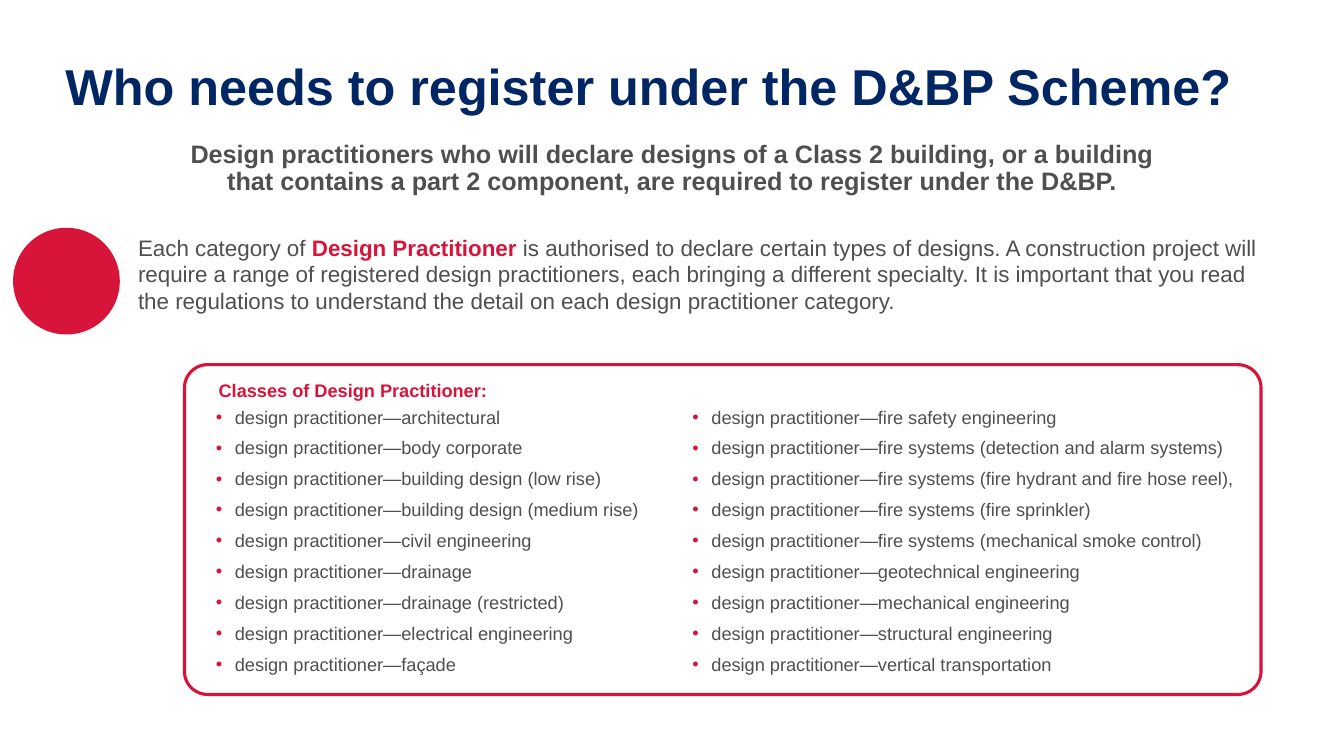
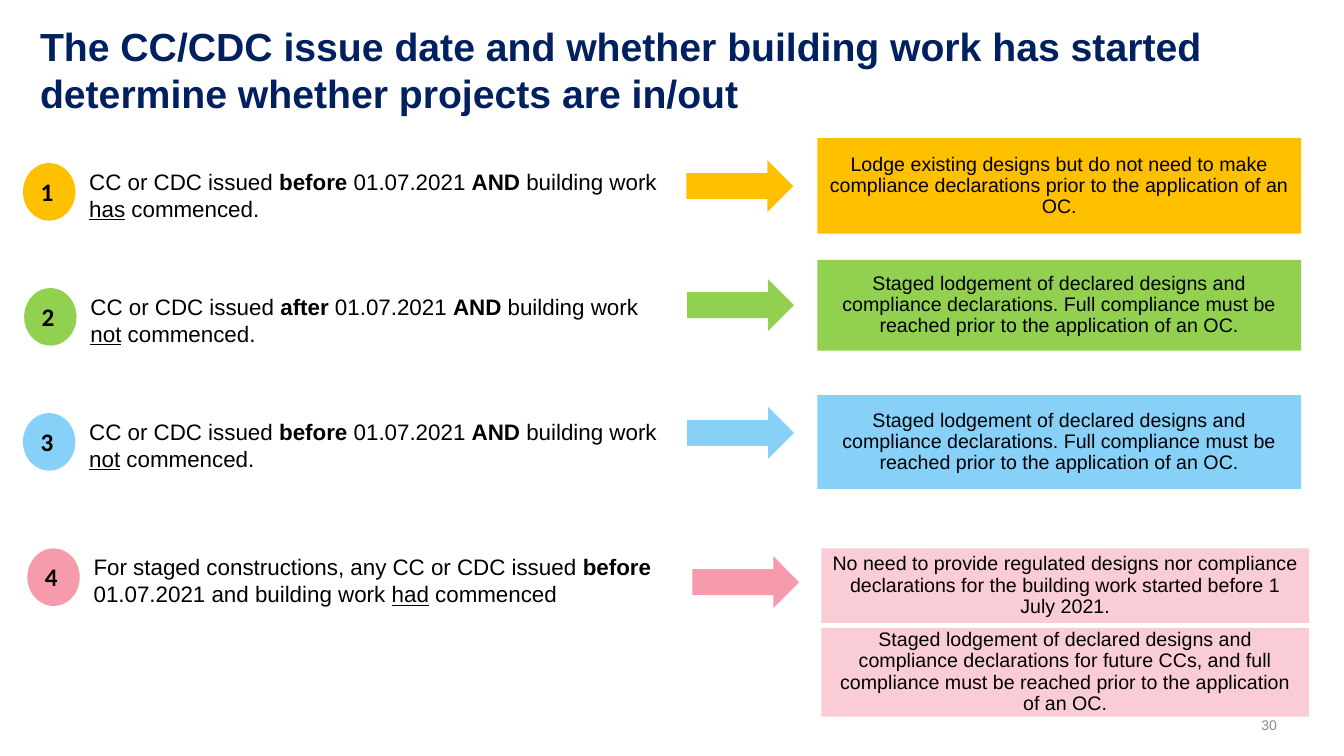
from lxml.etree import SubElement
from pptx import Presentation
from pptx.dml.color import RGBColor
from pptx.enum.shapes import MSO_SHAPE as Shape
from pptx.enum.text import MSO_ANCHOR as Anchor, PP_ALIGN as Align
from pptx.oxml.ns import qn
from pptx.util import Cm, Pt

RED, GREY, BLACK = "D7153A", "4F4F4F", "000000"
AMBER, GREEN, BLUE, PINK, PALE_PINK = "FFC000", "92D050", "87D1F9", "F59BAC", "FACDD6"
HEADING_FONT, BADGE_FONT = "Arial", "Calibri"

# A run is (text, marks): "b" bold, "u" underlined, "r" red
REGISTER_TITLE = "Who needs to register under the D&BP Scheme?"
REQUIREMENT = (
    "Design practitioners who will declare designs of a Class 2 building, or a building "
    "that contains a part 2 component, are required to register under the D&BP."
)
CATEGORY_NOTE = [
    ("Each category of ", ""),
    ("Design Practitioner ", "br"),
    ("is authorised to declare certain types of designs. A construction project will "
     "require a range of registered design practitioners, each bringing a different "
     "specialty. It is important that you read the regulations to understand the detail "
     "on each design practitioner category.", ""),
]
CLASSES_HEADING = "Classes of Design Practitioner:"
CLASS_PREFIX = "design practitioner—"
# left, width, classes
CLASS_COLUMNS = [
    (5.44, 11.15, [
        "architectural", "body corporate", "building design (low rise)",
        "building design (medium rise)", "civil engineering", "drainage",
        "drainage (restricted)", "electrical engineering", "façade",
    ]),
    (17.45, 13.74, [
        "fire safety engineering", "fire systems (detection and alarm systems)",
        "fire systems (fire hydrant and fire hose reel),",
        "fire systems (fire sprinkler)", "fire systems (mechanical smoke control)",
        "geotechnical engineering", "mechanical engineering",
        "structural engineering", "vertical transportation",
    ]),
]

DATES_TITLE = ("The CC/CDC issue date and whether building work has started "
               "determine whether projects are in/out")
PAGE_NUMBER = "30"
STAGED = ("Staged lodgement of declared designs and compliance declarations. "
          "Full compliance must be reached prior to the application of an OC.")


def issued(when, started):
    return [("CC or CDC issued ", ""), (when, "b"), (" 01.07.2021 ", ""), ("AND", "b"),
            (" building work ", ""), (started, "u"), (" commenced.", "")]


# colour, badge (left, top), arrow (left, top), condition,
# outcome colour, outcomes as (left, top, width, height, text)
CASES = [
    (AMBER, (0.58, 4.11), (17.3, 4.04), issued("before", "has"), AMBER, [
        (20.6, 3.48, 12.19, 2.41,
         "Lodge existing designs but do not need to make compliance declarations "
         "prior to the application of an OC.")]),
    (GREEN, (0.61, 7.26), (17.32, 7.04), issued("after", "not"), GREEN, [
        (20.6, 6.55, 12.19, 2.29, STAGED)]),
    (BLUE, (0.58, 10.41), (17.32, 10.26), issued("before", "not"), BLUE, [
        (20.6, 9.96, 12.19, 2.36, STAGED)]),
    (PINK, (0.69, 13.82), (17.45, 14.02), [
        ("For staged constructions, any CC or CDC issued ", ""), ("before", "b"),
        (" 01.07.2021 and building work ", ""), ("had", "u"), (" commenced", "")],
     PALE_PINK, [
        (20.7, 13.82, 12.29, 1.88,
         "No need to provide regulated designs nor compliance declarations for the "
         "building work started before 1 July 2021."),
        (20.7, 15.82, 12.29, 2.24,
         "Staged lodgement of declared designs and compliance declarations for future "
         "CCs, and full compliance must be reached prior to the application of an OC.")]),
]
BADGE_SIZE = (1.32, 1.45)
ARROW_SIZE = (2.69, 1.3)
CONDITION_OFFSET, CONDITION_SIZE = 1.42, (15.04, 1.63)


def colour(value):
    return RGBColor.from_string(value)


def add_bullet(paragraph):
    props = paragraph._p.get_or_add_pPr()
    props.set("marL", str(Cm(0.48)))
    props.set("indent", str(-Cm(0.48)))
    SubElement(SubElement(props, qn("a:buClr")), qn("a:srgbClr"), val=RED)
    SubElement(props, qn("a:buFont"), typeface="Arial")
    SubElement(props, qn("a:buChar"), char="•")


def write(frame, paragraphs, size, ink=BLACK, bold=False, font=HEADING_FONT,
          align=Align.LEFT, spacing=None, after=0, bullets=False):
    """Fill a text frame; each paragraph is a string or a list of marked runs."""
    frame.word_wrap = True
    for index, content in enumerate(paragraphs):
        paragraph = frame.add_paragraph() if index else frame.paragraphs[0]
        paragraph.alignment = align
        paragraph.space_after = Pt(after)
        if spacing:
            paragraph.line_spacing = spacing
        if bullets:
            add_bullet(paragraph)
        runs = [(content, "")] if isinstance(content, str) else content
        for text, marks in runs:
            run = paragraph.add_run()
            run.text = text
            run.font.name, run.font.size = font, Pt(size)
            run.font.bold = bold or "b" in marks
            run.font.underline = "u" in marks
            run.font.color.rgb = colour(RED if "r" in marks else ink)


def add_text(slide, box, paragraphs, size, inset=True, anchor=Anchor.TOP, **style):
    frame = slide.shapes.add_textbox(*map(Cm, box)).text_frame
    frame.vertical_anchor = anchor
    if not inset:
        frame.margin_left = frame.margin_right = 0
        frame.margin_top = frame.margin_bottom = 0
    write(frame, paragraphs, size, **style)


def add_title(slide, box, title, size, ink, **style):
    add_text(slide, box, [title], size, ink=ink, bold=True, **style)


def add_shape(slide, preset, box, fill=None, line=None):
    shape = slide.shapes.add_shape(preset, *map(Cm, box))
    shape.shadow.inherit = False
    if fill:
        shape.fill.solid()
        shape.fill.fore_color.rgb = colour(fill)
    else:
        shape.fill.background()
    if line:
        shape.line.color.rgb = colour(line)
        shape.line.width = Pt(2.25)
    else:
        shape.line.fill.background()
    return shape


def build_register_slide(slide):
    add_title(slide, (1.65, 1.55, 30.12, 1.4), REGISTER_TITLE, 36, "002664",
              inset=False, spacing=0.9)
    add_text(slide, (4.24, 3.56, 25.4, 1.4), [REQUIREMENT], 18, inset=False, ink=GREY,
             bold=True, align=Align.CENTER, spacing=0.9, after=8)
    add_text(slide, (3.48, 5.89, 28.7, 2.39), [CATEGORY_NOTE], 16, inset=False,
             ink=GREY, after=8)
    add_shape(slide, Shape.OVAL, (0.33, 5.74, 2.69, 2.69), RED)

    frame = add_shape(slide, Shape.ROUNDED_RECTANGLE, (4.65, 9.19, 27.13, 8.31), line=RED)
    frame.adjustments[0] = 0.07
    add_text(slide, (5.51, 9.63, 8, 0.51), [CLASSES_HEADING], 13, inset=False, ink=RED,
             bold=True, spacing=0.9, after=8)
    for left, width, classes in CLASS_COLUMNS:
        add_text(slide, (left, 10.29, width, 6.78), [CLASS_PREFIX + c for c in classes], 13,
                 inset=False, ink=GREY, spacing=0.9, after=8, bullets=True)


def build_dates_slide(slide):
    add_title(slide, (0.76, 0.43, 32.23, 2.64), DATES_TITLE, 28, "002060")
    for number, case in enumerate(CASES, 1):
        fill, (left, top), arrow_at, condition, outcome_fill, outcomes = case
        badge = add_shape(slide, Shape.OVAL, (left, top, *BADGE_SIZE), fill)
        badge.text_frame.vertical_anchor = Anchor.TOP
        write(badge.text_frame, [str(number)], 18, bold=True, font=BADGE_FONT)
        add_text(slide, (left + CONDITION_OFFSET, top, *CONDITION_SIZE), [condition], 16)
        add_shape(slide, Shape.RIGHT_ARROW, (*arrow_at, *ARROW_SIZE), fill)
        for *box, text in outcomes:
            outcome = add_shape(slide, Shape.RECTANGLE, box, outcome_fill)
            outcome.text_frame.vertical_anchor = Anchor.MIDDLE
            write(outcome.text_frame, [text], 14, align=Align.CENTER, spacing=0.9, after=8)
    add_text(slide, (30.18, 18.06, 2, 0.43), [PAGE_NUMBER], 10, inset=False,
             anchor=Anchor.BOTTOM, ink="8C8C8C", align=Align.RIGHT)


def main():
    deck = Presentation()
    deck.slide_width, deck.slide_height = Cm(33.87), Cm(19.05)
    for build in (build_register_slide, build_dates_slide):
        build(deck.slides.add_slide(deck.slide_layouts[6]))
    deck.save("out.pptx")


if __name__ == "__main__":
    main()
